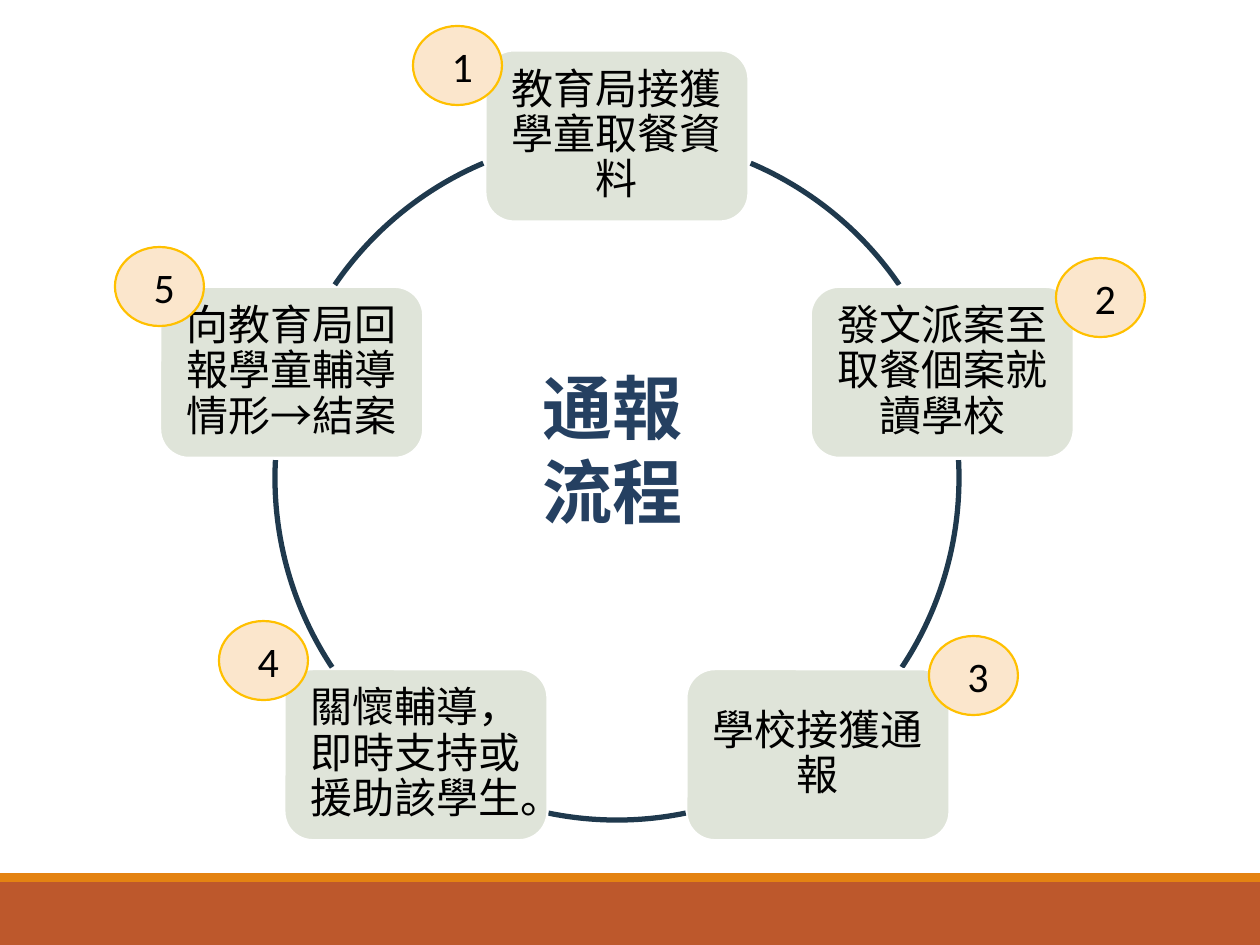
from math import cos, radians, sin

from pptx import Presentation
from pptx.dml.color import RGBColor
from pptx.enum.shapes import MSO_SHAPE
from pptx.enum.text import MSO_ANCHOR, MSO_AUTO_SIZE, PP_ALIGN
from pptx.util import Emu, Pt

TITLE = "通報流程"
STEPS = [
    # label, badge corner, arc to the next step in degrees
    ("教育局接獲學童取餐資料", (413, 26), (293, 325.6)),
    ("發文派案至取餐個案就讀學校", (1056, 258), (357, 33.6)),
    ("學校接獲通報", (929, 636), (78.4, 101.6)),
    ("關懷輔導，即時支持或援助該學生。", (219, 621), (146.4, 183)),
    ("向教育局回報學童輔導情形→結案", (115, 247), (214.4, 247)),
]
BARS = [(882, 63, "BD582C"), (873, 9, "E48312")]
WIDE, HIGH = 1260, 945
MID_X, MID_Y, RADIUS = 617, 478, 342
BOX_W, BOX_H = 263, 171
BADGE_W, BADGE_H = 89, 79


def px(n):
    """Turn px into EMU."""
    return Emu(round(n * 914400 / 126))


def color(code):
    """Turn a hex string into a colour."""
    return RGBColor.from_string(code)


def draw(slide, kind, area, fill=None, line=None, width=1.25):
    """Add a flat preset shape."""
    shape = slide.shapes.add_shape(kind, *map(px, area))
    shape.shadow.inherit = False
    if fill:
        shape.fill.solid()
        shape.fill.fore_color.rgb = color(fill)
    else:
        shape.fill.background()
    if line:
        shape.line.color.rgb = color(line)
        shape.line.width = Pt(width)
    else:
        shape.line.fill.background()
    return shape


def write(shape, text, font, size, code, pad, anchor=MSO_ANCHOR.MIDDLE,
          align=PP_ALIGN.CENTER, bold=False, lead=1.0):
    """Put one formatted run into a shape."""
    frame = shape.text_frame
    frame.word_wrap = True
    frame.auto_size = MSO_AUTO_SIZE.NONE
    frame.vertical_anchor = anchor
    frame.margin_left = frame.margin_right = px(13)
    frame.margin_top = frame.margin_bottom = px(pad)
    para = frame.paragraphs[0]
    para.alignment = align
    para.line_spacing = lead
    run = para.add_run()
    run.text = text
    run.font.name = font
    run.font.size = Pt(size)
    run.font.bold = bold
    run.font.color.rgb = color(code)


def main():
    """Build the report cycle slide."""
    deck = Presentation()
    deck.slide_width, deck.slide_height = px(WIDE), px(HIGH)
    slide = deck.slides.add_slide(deck.slide_layouts[5])

    for top, high, fill in BARS:
        draw(slide, MSO_SHAPE.RECTANGLE, (0, top, WIDE, high), fill)

    ring = (MID_X - RADIUS, MID_Y - RADIUS, 2 * RADIUS, 2 * RADIUS)
    for i, (label, _, arc) in enumerate(STEPS):
        turn = radians(360 / len(STEPS) * i - 90)
        left = MID_X + RADIUS * cos(turn) - BOX_W / 2
        top = MID_Y + RADIUS * sin(turn) - BOX_H / 2
        box = draw(slide, MSO_SHAPE.ROUNDED_RECTANGLE,
                   (left, top, BOX_W, BOX_H), "DFE4D9", "FFFFFF")
        write(box, label, "Lato", 24, "000000", 13, lead=0.9)
        curve = draw(slide, MSO_SHAPE.ARC, ring, line="1F394D", width=3)
        for j, angle in enumerate(arc):
            curve.adjustments[j] = angle * 0.6

    title = slide.shapes.title
    title.left, title.top, title.width, title.height = map(
        px, (530, 359, 198, 183))
    write(title, TITLE, "Lato", 40, "254061", 6, MSO_ANCHOR.TOP,
          PP_ALIGN.LEFT, True)

    for i, (_, spot, _) in enumerate(STEPS, 1):
        badge = draw(slide, MSO_SHAPE.OVAL, (*spot, BADGE_W, BADGE_H),
                     "FBE6CC", "FFC000")
        write(badge, f" {i}", "Calibri", 24, "000000", 6)

    deck.save("out.pptx")


if __name__ == "__main__":
    main()
